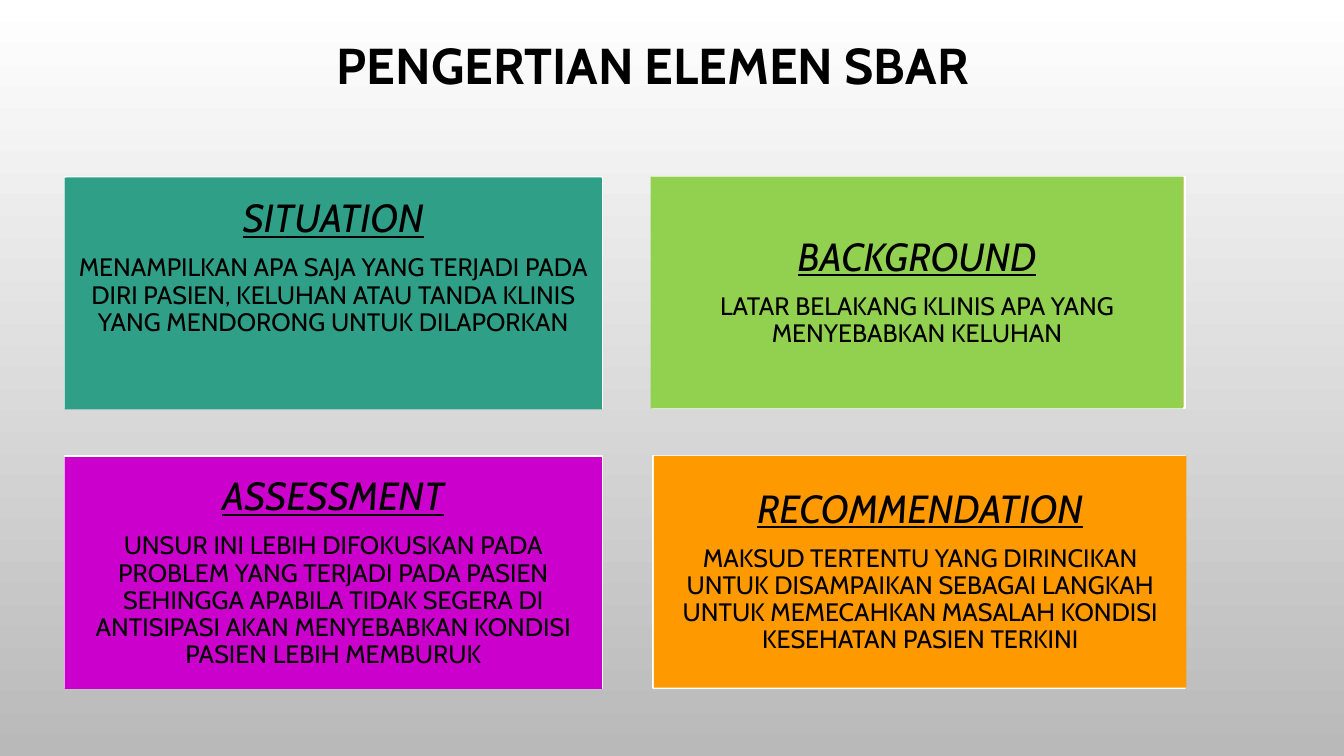
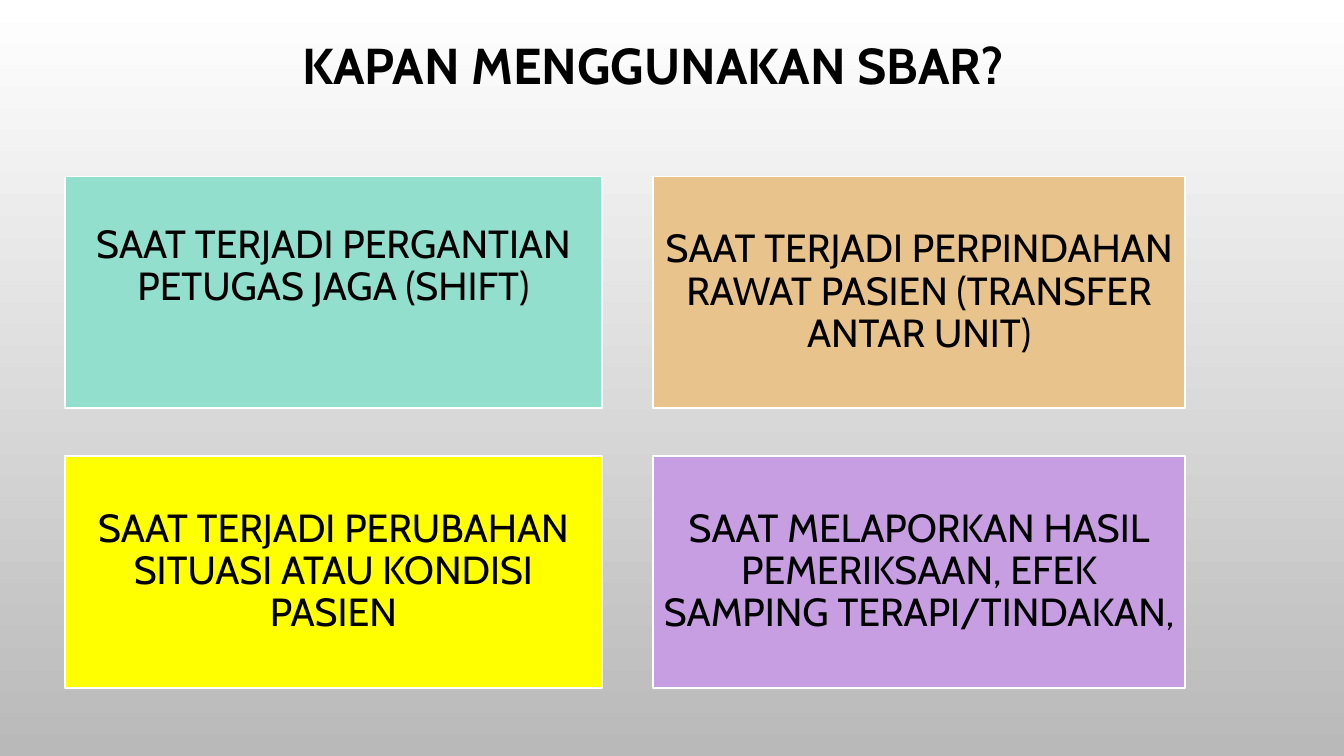
"""Build two slides on the SBAR elements and when to use them."""
from pptx import Presentation
from pptx import util as u
from pptx.dml.color import RGBColor
from pptx.enum import shapes, text

WHITE = RGBColor(0xFF, 0xFF, 0xFF)
GREY = RGBColor(0xB9, 0xB9, 0xB9)
BLACK = RGBColor(0, 0, 0)
MINT = RGBColor(0x93, 0xDF, 0xCE)
SAND = RGBColor(0xE8, 0xC4, 0x8C)
YELLOW = RGBColor(0xFF, 0xFF, 0)
LILAC = RGBColor(0xC8, 0x9E, 0xE3)
TEAL = RGBColor(0x2F, 0xA0, 0x87)
GREEN = RGBColor(0x92, 0xD0, 0x50)
PURPLE = RGBColor(0xCC, 0, 0xCC)
ORANGE = RGBColor(0xFF, 0x99, 0)

HEAD = {"size": u.Pt(28), "italic": True, "underline": True}
BODY = {"size": u.Pt(18)}
LARGE = {"size": u.Pt(28)}
TITLE = {"size": u.Pt(36), "bold": True}

ELEMENTS = [
    (MINT, TEAL, "SITUATION",
     "MENAMPILKAN APA SAJA YANG TERJADI PADA DIRI PASIEN, KELUHAN ATAU "
     "TANDA KLINIS YANG MENDORONG UNTUK DILAPORKAN"),
    (SAND, GREEN, "BACKGROUND",
     "LATAR BELAKANG KLINIS APA YANG MENYEBABKAN KELUHAN"),
    (YELLOW, PURPLE, "ASSESSMENT",
     "UNSUR INI LEBIH DIFOKUSKAN PADA PROBLEM YANG TERJADI PADA PASIEN "
     "SEHINGGA APABILA TIDAK SEGERA DI ANTISIPASI AKAN MENYEBABKAN "
     "KONDISI PASIEN LEBIH MEMBURUK"),
    (ORANGE, ORANGE, "RECOMMENDATION",
     "MAKSUD TERTENTU YANG DIRINCIKAN UNTUK DISAMPAIKAN SEBAGAI LANGKAH "
     "UNTUK MEMECAHKAN MASALAH KONDISI KESEHATAN PASIEN TERKINI"),
]
MOMENTS = [
    (MINT, "SAAT TERJADI PERGANTIAN PETUGAS JAGA (SHIFT)"),
    (SAND, "SAAT TERJADI PERPINDAHAN RAWAT PASIEN (TRANSFER ANTAR UNIT)"),
    (YELLOW, "SAAT TERJADI PERUBAHAN SITUASI ATAU KONDISI PASIEN"),
    (LILAC, "SAAT MELAPORKAN HASIL PEMERIKSAAN, EFEK SAMPING TERAPI/TINDAKAN,"),
]

COLS = [(1.63, 13.54), (16.45, 13.42)]
ROWS = [4.45, 11.49]
HIGH = 5.84
SHIFTS = [(0, 0.03), (-0.05, 0), (0, 0.03), (0.03, 0)]
PAD = 0.28
LIFT = 1.3


def assign(item, values):
    for name, value in values.items():
        setattr(item, name, value)


def write(para, words, style):
    para.alignment = text.PP_ALIGN.CENTER
    para.line_spacing = 0.9
    run = para.add_run()
    run.text = words
    assign(run.font, {"name": "Cabin", **style})
    run.font.color.rgb = BLACK


def card(slide, spot, fill, edge=True, shift=(0, 0)):
    row, col = divmod(spot, 2)
    left, wide = COLS[col]
    box = slide.shapes.add_shape(
        shapes.MSO_SHAPE.RECTANGLE, u.Cm(left + shift[0]),
        u.Cm(ROWS[row] + shift[1]), u.Cm(wide), u.Cm(HIGH))
    box.shadow.inherit = False
    box.fill.solid()
    box.fill.fore_color.rgb = fill
    if edge:
        box.line.color.rgb = WHITE
        box.line.width = u.Pt(1.25)
    else:
        box.line.fill.background()
    return box


def label(box, spot, parts):
    frame = box.text_frame
    pad = u.Cm(PAD)
    assign(frame, {
        "word_wrap": True, "vertical_anchor": text.MSO_ANCHOR.MIDDLE,
        "margin_left": pad, "margin_right": pad, "margin_top": pad,
        "margin_bottom": u.Cm(PAD + (LIFT if spot == 0 else 0))})
    for rank, (words, style) in enumerate(parts):
        para = frame.add_paragraph() if rank else frame.paragraphs[0]
        if rank < len(parts) - 1:
            para.space_after = u.Pt(9.8)
        write(para, words, style)


def setup(deck):
    deck.slide_width, deck.slide_height = u.Cm(33.87), u.Cm(19.05)
    fill = deck.slide_master.background.fill
    fill.gradient()
    fill.gradient_angle = 270
    for stop, tone in zip(fill.gradient_stops, (WHITE, GREY)):
        stop.color.rgb = tone
    layout = deck.slide_layouts.get_by_name("Title Only")
    title = layout.placeholders[0]
    assign(title, {"left": u.Cm(2.06), "top": u.Cm(0.91),
                   "width": u.Cm(28.78), "height": u.Cm(2.84)})
    assign(title.text_frame, {"vertical_anchor": text.MSO_ANCHOR.TOP,
                              "auto_size": text.MSO_AUTO_SIZE.NONE})
    return layout


def start(deck, layout, words):
    slide = deck.slides.add_slide(layout)
    write(slide.shapes.title.text_frame.paragraphs[0], words, TITLE)
    return slide


def main():
    deck = Presentation()
    layout = setup(deck)

    slide = start(deck, layout, "PENGERTIAN ELEMEN SBAR")
    for spot, (back, front, head, body) in enumerate(ELEMENTS):
        card(slide, spot, back)
        box = card(slide, spot, front, False, SHIFTS[spot])
        label(box, spot, [(head, HEAD), (body, BODY)])

    slide = start(deck, layout, "KAPAN MENGGUNAKAN SBAR?")
    for spot, (fill, words) in enumerate(MOMENTS):
        label(card(slide, spot, fill), spot, [(words, LARGE)])

    deck.save("out.pptx")


if __name__ == "__main__":
    main()
